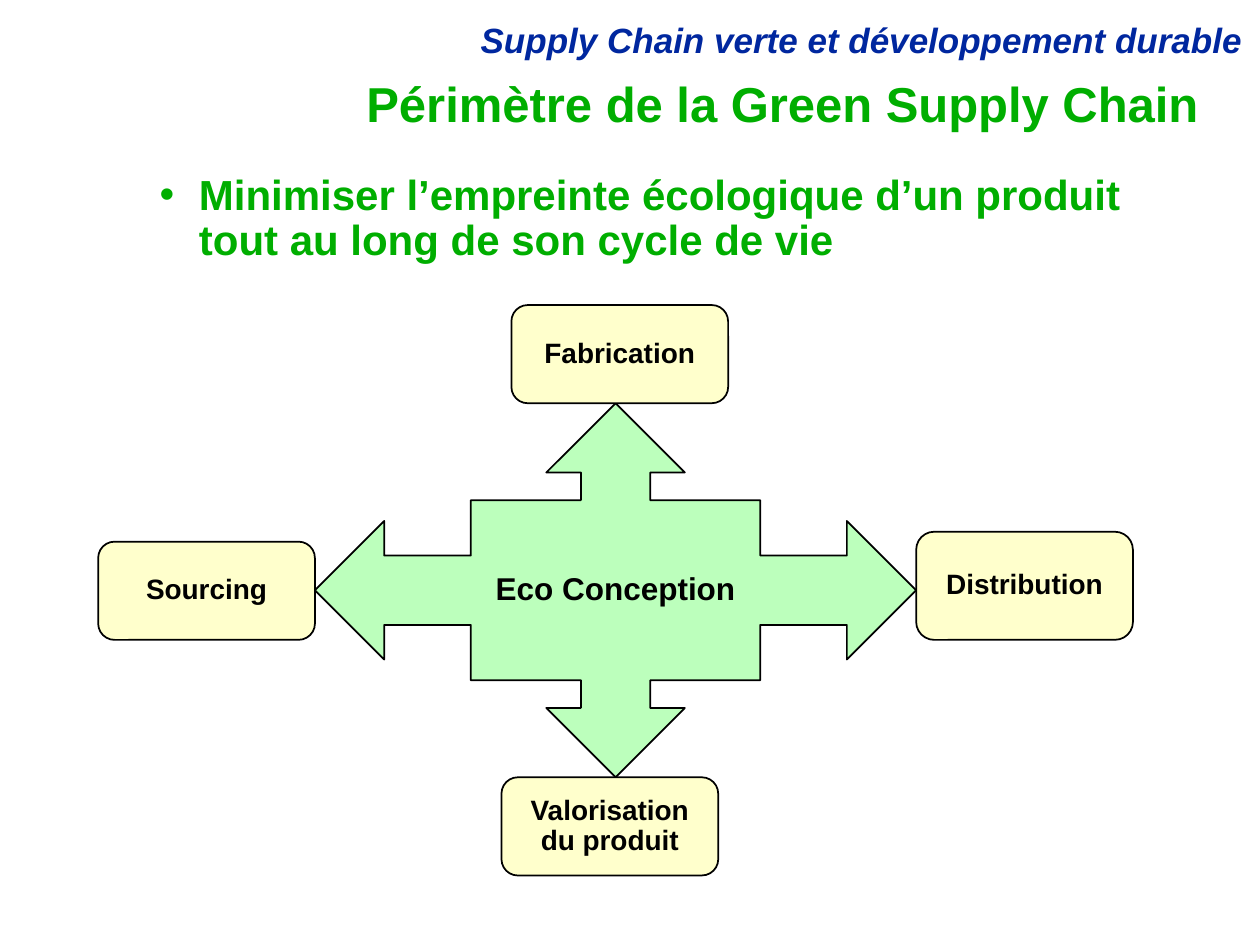
from lxml import etree
from pptx import Presentation
from pptx.dml.color import RGBColor
from pptx.enum.shapes import MSO_SHAPE
from pptx.enum.text import MSO_ANCHOR, MSO_AUTO_SIZE, PP_ALIGN
from pptx.oxml.ns import qn
from pptx.util import Cm, Pt

ROUNDED = MSO_SHAPE.ROUNDED_RECTANGLE
FOUR_ARROWS = MSO_SHAPE.QUAD_ARROW_CALLOUT
LEFT, CENTER, RIGHT = PP_ALIGN.LEFT, PP_ALIGN.CENTER, PP_ALIGN.RIGHT
TOP, MIDDLE = MSO_ANCHOR.TOP, MSO_ANCHOR.MIDDLE

BLUE = RGBColor(0x00, 0x27, 0x9F)
GREEN = RGBColor(0x00, 0xAE, 0x00)
PALE_GREEN = RGBColor(0xBC, 0xFF, 0xBC)
PALE_YELLOW = RGBColor(0xFF, 0xFF, 0xCC)
BLACK = RGBColor(0x00, 0x00, 0x00)

# Central callout; the stage boxes touch its arrow tips (cm)
HUB_LEFT, HUB_TOP, HUB_WIDTH, HUB_HEIGHT = 6.35, 8.13, 12.12, 7.54
HUB_RIGHT, HUB_BOTTOM = HUB_LEFT + HUB_WIDTH, HUB_TOP + HUB_HEIGHT
STAGE_WIDTH, STAGE_HEIGHT = 4.37, 1.98


def write_text(shape, text, *, size, color=BLACK, italic=False, align=CENTER,
               anchor=MIDDLE, wrap=True):
    """Write one bold paragraph and return it."""
    frame = shape.text_frame
    frame.auto_size = MSO_AUTO_SIZE.NONE
    frame.word_wrap = wrap
    frame.vertical_anchor = anchor
    frame.margin_left = frame.margin_right = Cm(0.25)
    frame.margin_top = frame.margin_bottom = Cm(0.13)
    paragraph = frame.paragraphs[0]
    paragraph.alignment = align
    paragraph.line_spacing = 0.9
    paragraph.space_before = Pt(0)
    run = paragraph.add_run()
    run.text = text
    font = run.font
    font.name, font.size, font.color.rgb = "Arial", Pt(size), color
    font.bold, font.italic = True, italic
    return paragraph


def place(shape, left, top, width, height):
    shape.left, shape.top = Cm(left), Cm(top)
    shape.width, shape.height = Cm(width), Cm(height)


def add_bullet(paragraph, indent):
    properties = paragraph._p.get_or_add_pPr()
    properties.set("marL", str(Cm(indent)))
    properties.set("indent", str(-Cm(indent)))
    etree.SubElement(properties, qn("a:buFont")).set("typeface", "Arial")
    etree.SubElement(properties, qn("a:buChar")).set("char", "•")


def add_block(slide, kind, box, fill, text, **text_format):
    block = slide.shapes.add_shape(kind, *map(Cm, box))
    block.shadow.inherit = False
    block.fill.solid()
    block.fill.fore_color.rgb = fill
    block.line.color.rgb = BLACK
    block.line.width = Pt(1)
    write_text(block, text, **text_format)


def add_stage(slide, text, left, top, height=STAGE_HEIGHT, wrap=False):
    add_block(slide, ROUNDED, (left, top, STAGE_WIDTH, height), PALE_YELLOW,
              text, size=16, wrap=wrap)


def main():
    prs = Presentation()
    prs.slide_width, prs.slide_height = Cm(25.4), Cm(19.05)
    slide = prs.slides.add_slide(prs.slide_layouts[1])

    # Course header
    header = slide.shapes.add_textbox(Cm(4.78), Cm(0.33), Cm(20.52), Cm(1.02))
    write_text(header, "Supply Chain verte et développement durable", size=20,
               color=BLUE, italic=True, align=RIGHT, anchor=TOP)

    # Title and goal
    title, goal = slide.placeholders
    place(title, 4.29, 1.52, 20.12, 1.27)
    write_text(title, "Périmètre de la Green Supply Chain", size=28,
               color=GREEN, align=RIGHT)
    place(goal, 2.97, 3.38, 19.89, 11.43)
    goal_line = write_text(
        goal,
        "Minimiser l’empreinte écologique d’un produit tout au long de son cycle de vie",
        size=24, color=GREEN, align=LEFT, anchor=TOP)
    add_bullet(goal_line, 0.79)

    # Eco-design hub and the four stages around it
    add_block(slide, FOUR_ARROWS, (HUB_LEFT, HUB_TOP, HUB_WIDTH, HUB_HEIGHT),
              PALE_GREEN, "Eco Conception", size=18)
    add_stage(slide, "Distribution", HUB_RIGHT, 10.72, height=2.18)
    add_stage(slide, "Fabrication", 10.31, HUB_TOP - STAGE_HEIGHT)
    add_stage(slide, "Valorisation du produit", 10.11, HUB_BOTTOM, wrap=True)
    add_stage(slide, "Sourcing", HUB_LEFT - STAGE_WIDTH, 10.92)

    prs.save("out.pptx")


if __name__ == "__main__":
    main()
